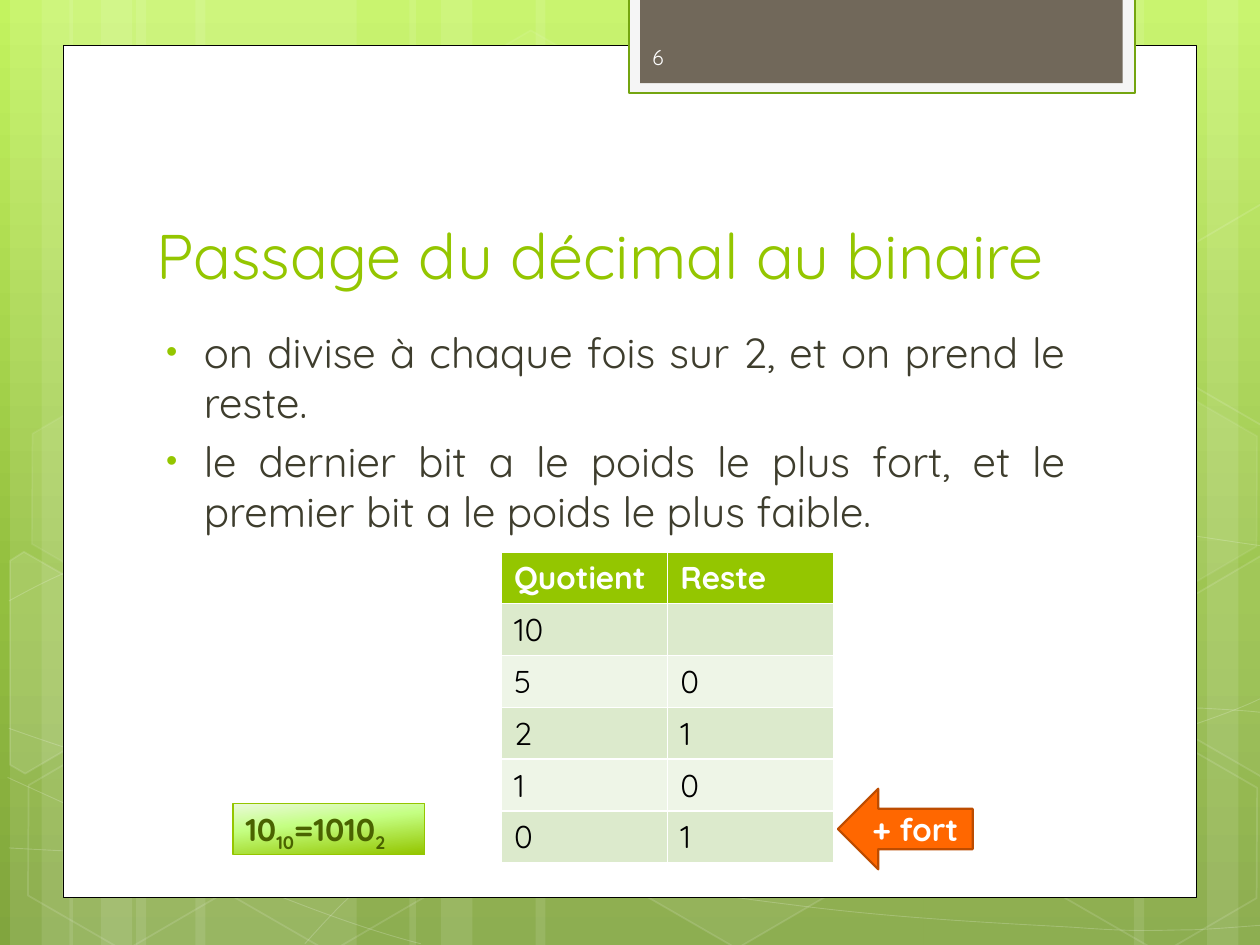
from math import cos, radians, sin

from pptx import Presentation
from pptx import util as u
from pptx.dml.color import RGBColor
from pptx.enum import shapes, text
from pptx.oxml import parse_xml
from pptx.oxml.ns import nsdecls, qn

WIDE, HIGH = 10, 7.5
FONT = "Quicksand"
GREEN, WHITE = "94C600", "FFFFFF"
KIND = shapes.MSO_SHAPE
TOP, MID, LOW = text.MSO_ANCHOR.TOP, text.MSO_ANCHOR.MIDDLE, text.MSO_ANCHOR.BOTTOM
TILT = 30

# Each wave: a start, then curves (two controls and an end) or a line's end.
WAVES = [
    [(.07, 6.73), (.61, 6.76, 1.15, 6.79, 1.9, 6.78), (2.65, 6.77, 3.58, 6.75, 4.58, 6.65),
     (5.58, 6.55, 7, 6.36, 7.92, 6.17), (8.83, 5.98, 9.77, 5.68, 10.07, 5.51)],
    [(.07, 4.77), (.36, 4.61, .65, 4.46, 1.21, 4.31), (1.78, 4.16, 2.59, 3.94, 3.47, 3.87),
     (4.36, 3.8, 5.44, 3.79, 6.54, 3.87), (7.64, 3.95, 9.47, 4.26, 10.07, 4.34)],
    [(.06, 6.17), (1.27, 6.72, 2.47, 7.27, 3.34, 7.49)],
    [(.07, 5.78), (.38, 5.89, .7, 6, 1.28, 6.16), (1.86, 6.31, 2.73, 6.56, 3.57, 6.73),
     (4.4, 6.9, 5.45, 7.08, 6.28, 7.18), (7.11, 7.29, 8, 7.33, 8.53, 7.36),
     (9.05, 7.4, 9.19, 7.38, 9.45, 7.38), (9.71, 7.37, 9.89, 7.35, 10.07, 7.34)],
    [(2.42, 7.49), (2.6, 7.29, 2.78, 7.09, 3.02, 6.91), (3.26, 6.73, 3.6, 6.53, 3.88, 6.39),
     (4.16, 6.25, 4.33, 6.19, 4.7, 6.09), (5.06, 5.99, 5.73, 5.85, 6.08, 5.78),
     (6.44, 5.71, 6.49, 5.71, 6.8, 5.69), (7.11, 5.66, 7.6, 5.63, 7.94, 5.62),
     (8.29, 5.61, 8.86, 5.62, 8.86, 5.62), (9.53, 5.62),
     (9.71, 5.63, 9.88, 5.64, 9.97, 5.65), (10.06, 5.66, 10.03, 5.65, 10.06, 5.66)],
]
# Left, top, fill opacity and line opacity, in percent.
HEXES = [(3.34, .36, 4, 8), (4.97, 5.89, 6, 12), (.11, 5.91, 0, 12), (.14, 3.12, 7, 8),
         (1.74, 5.92, 0, 12), (7.53, 4.53, 10, 12), (8.34, 5.93, 0, 12), (8.34, 3.14, 7, 8)]
LEFT_CUT = [(.08, 4.45), (.19, 4.38), (.96, 4.82), (.95, 5.7), (.2, 6.14), (.08, 6.07)]
RIGHT_CUT = [(9.26, 4.85), (10.01, 4.41), (10.09, 4.46), (10.09, 6.13), (10.02, 6.17), (9.26, 5.73)]
CUT_STEP = 2.79


def rgb(code):
    return RGBColor.from_string(code)


def tint(fill, code, part=100):
    """Solid fill with an opacity in percent; none at zero."""
    if not part:
        fill.background()
        return
    fill.solid()
    fill.fore_color.rgb = rgb(code)
    if part < 100:
        node = fill._xPr.find(qn("a:solidFill"))[0]
        node.append(parse_xml(f'<a:alpha {nsdecls("a")} val="{part * 1000}"/>'))


def blend(props, stops, angle):
    """Swap the solid fill of a properties node for a gradient."""
    marks = "".join(f'<a:gs pos="{pos * 1000}"><a:srgbClr val="{code}"/></a:gs>'
                    for pos, code in stops)
    node = parse_xml(f'<a:gradFill {nsdecls("a")} rotWithShape="1"><a:gsLst>{marks}</a:gsLst>'
                     f'<a:lin ang="{angle * 60000}" scaled="0"/></a:gradFill>')
    props.replace(props.find(qn("a:solidFill")), node)


def dress(item, fill=WHITE, part=100, line=None, wide=1, clear=100):
    item.shadow.inherit = False
    tint(item.fill, fill, part)
    tint(item.line.fill, line or WHITE, clear if line else 0)
    if line:
        item.line.width = u.Pt(wide)
    return item


def block(slide, kind, box, **look):
    return dress(slide.shapes.add_shape(kind, *map(u.Inches, box)), **look)


def trace(slide, dots, close, **look):
    dots = [tuple(map(u.Inches, dot)) for dot in dots]
    path = slide.shapes.build_freeform(*dots[0])
    path.add_line_segments(dots[1:], close=close)
    return dress(path.convert_to_shape(), **look)


def curve(slide, wave, **look):
    """Outline through all points, whose triples then become cubic curves."""
    dots = [seg[k:k + 2] for seg in wave for k in range(0, len(seg), 2)]
    item = trace(slide, dots, False, **look)
    lines = iter(list(item._element.iter(qn("a:lnTo"))))
    for seg in wave[1:]:
        first = next(lines)
        if len(seg) == 2:
            continue
        bend = parse_xml(f'<a:cubicBezTo {nsdecls("a")}/>')
        first.addprevious(bend)
        for line in (first, next(lines), next(lines)):
            bend.append(line[0])
            line.getparent().remove(line)


def cut(slide, dots, **look):
    """Closed outline held in a tilted frame."""
    c, s = cos(radians(TILT)), sin(radians(TILT))
    flat = [(x * c + y * s, y * c - x * s) for x, y in dots]
    mx, my = ((min(axis) + max(axis)) / 2 for axis in zip(*flat))
    dx, dy = mx * c - my * s - mx, mx * s + my * c - my
    trace(slide, [(x + dx, y + dy) for x, y in flat], True, **look).rotation = TILT


def write(par, words, size, code, bold=False, base=0):
    run = par.add_run()
    run.text = words
    look = {"name": FONT, "size": u.Pt(size), "bold": bold}
    for key, val in look.items():
        setattr(run.font, key, val)
    run.font.color.rgb = rgb(code)
    if base:
        run._r.get_or_add_rPr().set("baseline", str(base * 1000))


def frame(slide, box, anchor=TOP):
    body = slide.shapes.add_textbox(*map(u.Inches, box)).text_frame
    for key, val in {"word_wrap": True, "vertical_anchor": anchor}.items():
        setattr(body, key, val)
    return body


def backdrop(slide):
    slide.background.fill.solid()
    blend(slide.element.find(".//" + qn("p:bgPr")),
          [(0, "C3F35F"), (62, "93BF3F"), (100, "81A53E")], 90)
    trio = [(1.08, 1.75), (.08, .5), (.33, .83)]
    bands = trio + [(x + .47, w) for x, w in trio]
    bands += [(7.33, 1.75), (9.58, .5), (9, .83), (4.25, 3.08), (3.25, .5), (3.5, .83)]
    for x, w in bands:
        block(slide, KIND.RECTANGLE, (x, 0, w, HIGH), part=10)
    for wave in WAVES:
        curve(slide, wave, part=0, line=WHITE, wide=.5, clear=20)
    for x, y, part, clear in HEXES:
        hexa = block(slide, KIND.HEXAGON, (x, y, 1.75, 1.52), part=part, line=WHITE, clear=clear)
        hexa.rotation = TILT
        hexa.adjustments[0] = .285
    upper = [(x, y - CUT_STEP) for x, y in RIGHT_CUT]
    for dots, part in ((LEFT_CUT, 10), (RIGHT_CUT, 4), (upper, 0)):
        cut(slide, dots, part=part, line=WHITE, clear=12)


def card(slide, box):
    x, y, w, h = box
    block(slide, KIND.RECTANGLE, box, line="000000", wide=.5)
    tab = x + w / 2 - .01
    block(slide, KIND.RECTANGLE, (tab, -.02, 4.02, .76), fill="F5F5F5", line="74A510", wide=1.25)
    block(slide, KIND.RECTANGLE, (tab + .09, -.02, 3.83, .68), fill="71685A")
    body = frame(slide, (tab + .09, .25, 1.46, .4), MID)
    write(body.paragraphs[0], "6", 12, "FEFEFE")


def prose(slide, box, title, points):
    x, y, w, h = box
    write(frame(slide, (x, y, w, 1.25), LOW).paragraphs[0], title, 36, GREEN)
    body = frame(slide, (x, y + 1.42, w - .27, h - 1.42))
    for n, words in enumerate(points):
        par = body.add_paragraph() if n else body.paragraphs[0]
        par.alignment, par.space_before = text.PP_ALIGN.JUSTIFY, u.Pt(4.8)
        props = par._p.get_or_add_pPr()
        props.set("marL", str(u.Inches(.38)))
        props.set("indent", str(u.Inches(-.3)))
        for mark in (f'buClr {nsdecls("a")}><a:srgbClr val="{GREEN}"/></a:buClr>',
                     f'buSzPct {nsdecls("a")} val="76000"/>',
                     f'buFont {nsdecls("a")} typeface="Arial"/>',
                     f'buChar {nsdecls("a")} char="•"/>'):
            props.append(parse_xml("<a:" + mark))
        write(par, words, 24, "3E3D2D")


def steps(slide, box, rows):
    """Table whose white rules come from its style."""
    grid = slide.shapes.add_table(len(rows), len(rows[0]), *map(u.Inches, box)).table
    for r, row in enumerate(rows):
        for c, words in enumerate(row):
            cell = grid.cell(r, c)
            tint(cell.fill, ("DCEACC" if r % 2 else "EEF5E7") if r else GREEN)
            if words:
                write(cell.text_frame.paragraphs[0], words, 18, "000000" if r else WHITE, not r)


def result(slide, box):
    x, y, w, h = box
    note = block(slide, KIND.LEFT_ARROW, (x + w - 1.07, y, 1.07, h),
                 fill="FF6700", line="BD4C00", wide=1.25).text_frame
    note.vertical_anchor, note.word_wrap = MID, False
    note.paragraphs[0].alignment = text.PP_ALIGN.CENTER
    write(note.paragraphs[0], "+ fort", 18, WHITE, True)
    plate = block(slide, KIND.RECTANGLE, (x, y + .12, 1.52, .4), line=GREEN, wide=.75)
    blend(plate._element.spPr, [(0, "EAF9DA"), (40, "C4FF82"), (100, GREEN)], 84)
    plate.text_frame.vertical_anchor = TOP
    par = plate.text_frame.paragraphs[0]
    par.alignment = text.PP_ALIGN.LEFT
    for words, base in (("10", 0), ("10", -25), ("=1010", 0), ("2", -25)):
        write(par, words, 18, "4A6300", True, base)


def main():
    deck = Presentation()
    deck.slide_width, deck.slide_height = u.Inches(WIDE), u.Inches(HIGH)
    slide = deck.slides.add_slide(deck.slide_layouts[6])
    backdrop(slide)
    card(slide, (.5, .36, 9, 6.76))
    prose(slide, (1.14, 1.12, 7.68, 3.42), "Passage du décimal au binaire",
          ["on divise à chaque fois sur 2, et on prend le reste.",
           "le dernier bit a le poids le plus fort, et le premier bit a le poids le plus faible."])
    steps(slide, (3.98, 4.38, 2.64, 2.47),
          [("Quotient", "Reste"), ("10", ""), ("5", "0"), ("2", "1"), ("1", "0"), ("0", "1")])
    result(slide, (1.85, 6.26, 5.87, .64))
    deck.save("out.pptx")


if __name__ == "__main__":
    main()
